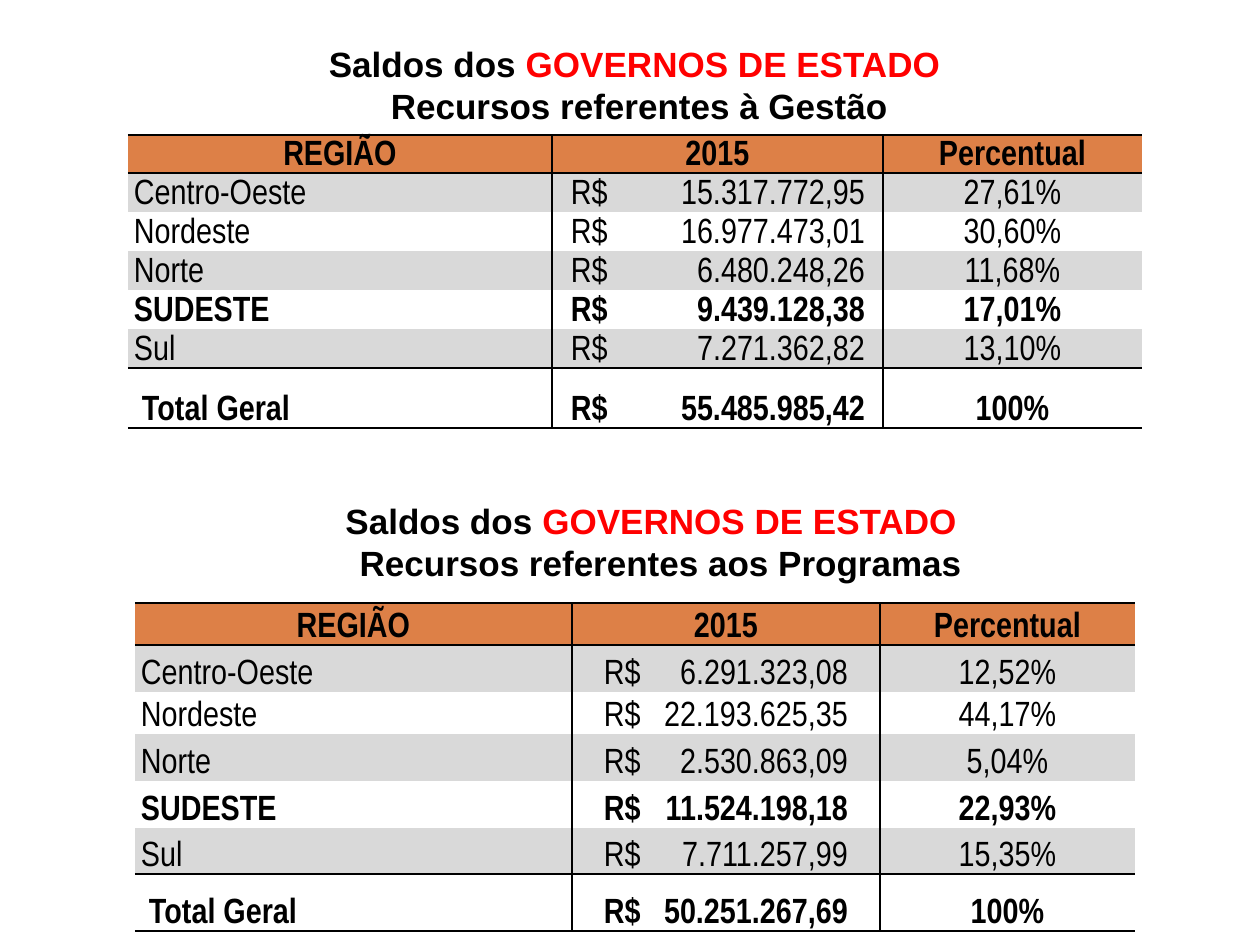
from lxml import etree
from pptx import Presentation, util as u
from pptx.dml.color import RGBColor
from pptx.enum import text
from pptx.oxml.ns import qn

PX = 914400 // 126
COLORS = {"header": "DD8047", "band": "D9D9D9", "ink": "000000", "accent": "FF0000"}
NO_STYLE = "{2D5ABB26-0587-4C30-8999-92F81FD0307C}"
HEADERS = ("REGIÃO", "2015", "Percentual")
BOLD_REGIONS = ("SUDESTE", "Total Geral")

SECTIONS = [
    {
        "title_box": (314, 36, 641, 97), "wrap": False,
        "title": [[("Saldos dos ", "ink"), ("GOVERNOS DE ESTADO", "accent")],
                  [(" Recursos referentes à Gestão", "ink")]],
        "corner": (128, 135), "columns": (424, 331, 259),
        "heights": (38, 39, 39, 39, 39, 39, 60),
        "currency_left": 19, "amount_right": 313,
        "balances": [
            ("Centro-Oeste", "15.317.772,95", "27,61%"),
            ("Nordeste", "16.977.473,01", "30,60%"),
            ("Norte", "6.480.248,26", "11,68%"),
            ("SUDESTE", "9.439.128,38", "17,01%"),
            ("Sul", "7.271.362,82", "13,10%"),
            ("Total Geral", "55.485.985,42", "100%"),
        ],
    },
    {
        "title_box": (314, 493, 684, 97), "wrap": True,
        "title": [[("Saldos dos ", "ink"), ("GOVERNOS DE ESTADO ", "accent")],
                  [(" Recursos referentes aos Programas", "ink")]],
        "corner": (135, 603), "columns": (437, 308, 255),
        "heights": (38, 47, 39, 47, 47, 46, 57),
        "currency_left": 32, "amount_right": 276,
        "balances": [
            ("Centro-Oeste", "6.291.323,08", "12,52%"),
            ("Nordeste", "22.193.625,35", "44,17%"),
            ("Norte", "2.530.863,09", "5,04%"),
            ("SUDESTE", "11.524.198,18", "22,93%"),
            ("Sul", "7.711.257,99", "15,35%"),
            ("Total Geral", "50.251.267,69", "100%"),
        ],
    },
]


def px(*lengths):
    return [length * PX for length in lengths]


def write(paragraph, words, font, color="ink", bold=True):
    run = paragraph.add_run()
    run.text = words
    for name, value in {"name": font, "size": u.Pt(20), "bold": bold}.items():
        setattr(run.font, name, value)
    run.font.color.rgb = RGBColor.from_string(COLORS[color])


def add_title(slide, section):
    frame = slide.shapes.add_textbox(*px(*section["title_box"])).text_frame
    frame.word_wrap = section["wrap"]
    for number, line in enumerate(section["title"]):
        paragraph = frame.add_paragraph() if number else frame.paragraphs[0]
        paragraph.alignment = text.PP_ALIGN.CENTER
        for words, color in line:
            write(paragraph, words, "Arial", color)


def add_borders(cell, sides):
    """Draw the named sides and switch the others off."""
    properties = cell._tc.get_or_add_tcPr()
    for side in "LRTB":
        line = etree.SubElement(properties, qn(f"a:ln{side}"), w=str(u.Pt(1)))
        if side in sides:
            fill = etree.SubElement(line, qn("a:solidFill"))
            etree.SubElement(fill, qn("a:srgbClr"), val=COLORS["ink"])
        else:
            etree.SubElement(line, qn("a:noFill"))


def add_right_tab(paragraph, position):
    tabs = etree.SubElement(paragraph._p.get_or_add_pPr(), qn("a:tabLst"))
    etree.SubElement(tabs, qn("a:tab"), pos=str(position * PX), algn="r")


def borders_at(row, column, total_row):
    """Rules divide the columns and frame the header and total rows."""
    sides = ("L" if column > 0 else "") + ("R" if column < 2 else "")
    if row in (0, 1, total_row):
        sides += "T"
    if row in (0, total_row - 1, total_row):
        sides += "B"
    return sides


def add_balances(slide, section):
    rows = [HEADERS] + section["balances"]
    total_row = len(rows) - 1
    size = sum(section["columns"]), sum(section["heights"])
    table = slide.shapes.add_table(
        len(rows), len(HEADERS), *px(*section["corner"], *size)).table
    table._tbl.tblPr.find(qn("a:tableStyleId")).text = NO_STYLE
    for column, width in zip(table.columns, section["columns"]):
        column.width = width * PX
    for row, height in zip(table.rows, section["heights"]):
        row.height = height * PX

    for r, values in enumerate(rows):
        for c, value in enumerate(values):
            cell = table.cell(r, c)
            paragraph = cell.text_frame.paragraphs[0]
            is_amount = c == 1 and r > 0
            is_region = c == 0 and r > 0
            left, right = 6, 6
            if is_amount:
                left, right = section["currency_left"], 1
                value = f"R$\t{value}"
            elif is_region and r == total_row:
                left = 14
            layout = {"margin_left": left * PX, "margin_right": right * PX,
                      "margin_top": 0, "margin_bottom": 0,
                      "vertical_anchor": text.MSO_ANCHOR.BOTTOM}
            for name, setting in layout.items():
                setattr(cell, name, setting)

            paragraph.alignment = (text.PP_ALIGN.LEFT if is_amount or is_region
                                   else text.PP_ALIGN.CENTER)
            if is_amount:
                add_right_tab(paragraph, section["amount_right"] - left)
            write(paragraph, value, "Arial Narrow",
                  bold=r == 0 or values[0] in BOLD_REGIONS)

            add_borders(cell, borders_at(r, c, total_row))
            if r == 0 or r % 2:
                cell.fill.solid()
                cell.fill.fore_color.rgb = RGBColor.from_string(
                    COLORS["band" if r else "header"])
            else:
                cell.fill.background()


def main():
    deck = Presentation()
    deck.slide_width, deck.slide_height = u.Inches(10), u.Inches(7.5)
    slide = deck.slides.add_slide(deck.slide_layouts[6])
    for section in SECTIONS:
        add_balances(slide, section)
        add_title(slide, section)
    deck.save("out.pptx")


if __name__ == "__main__":
    main()
